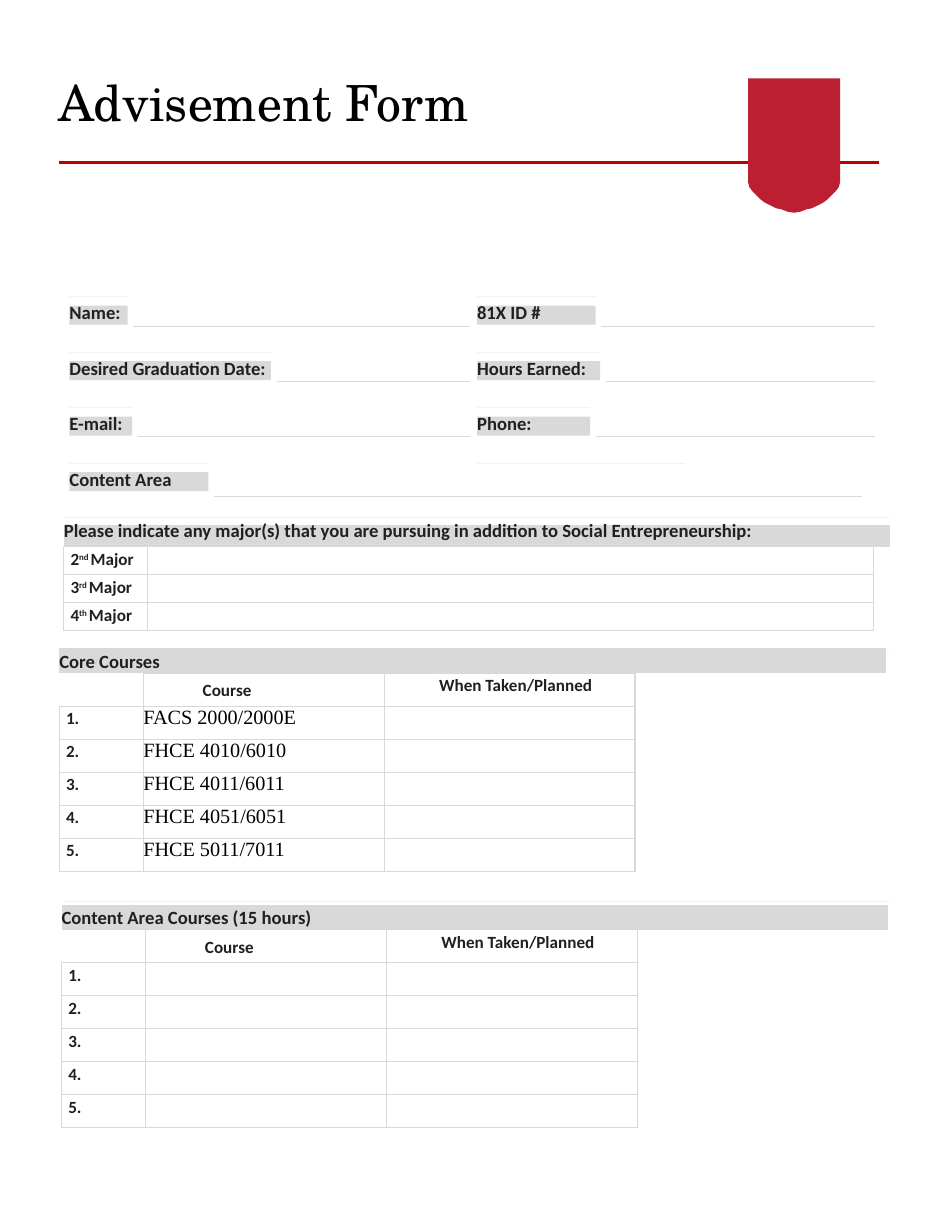
from dataclasses import dataclass

from pptx import Presentation
from pptx.dml.color import RGBColor
from pptx.enum.shapes import MSO_CONNECTOR as Connector, MSO_SHAPE as Preset
from pptx.enum.text import MSO_ANCHOR as Anchor, MSO_AUTO_SIZE as AutoSize, PP_ALIGN as Align
from pptx.oxml.xmlchemy import OxmlElement as new_element
from pptx.util import Inches, Pt

GREY, FAINT, INK = "DAD9D9", "F2F2F2", "231F20"
RED, CRIMSON, BLACK, WHITE = "C00000", "BB1F31", "000000", "FFFFFF"
NO_STYLE = "{2D5ABB26-0587-4C30-8999-92F81FD0307C}"
LEFT_COLUMN, RIGHT_COLUMN = 0.62, 4.26
FIRST_FIELD, FIELD_PITCH = 2.65, 0.495
COURSE_COLUMNS = (0.75, 2.15, 2.24, 2.24)
COURSE_ROWS = (0.22,) + (1.77 / 6,) * 6


@dataclass
class Field:
    label: str
    row: int
    left: float
    width: float
    line_end: float
    drop: float = 0.26


FIELDS = (
    Field("Name:", 0, LEFT_COLUMN, 0.52, 4.2),
    Field("81X ID #", 0, RIGHT_COLUMN, 1.06, 7.81),
    Field("Desired Graduation Date:", 1, LEFT_COLUMN, 1.8, 4.2),
    Field("Hours Earned:", 1, RIGHT_COLUMN, 1.1, 7.81),
    Field("E-mail:", 2, LEFT_COLUMN, 0.56, 4.2),
    Field("Phone:", 2, RIGHT_COLUMN, 1.01, 7.81),
    Field("Content Area", 3, LEFT_COLUMN, 1.24, 7.7, 0.3),
)


@dataclass
class CourseTable:
    heading: str
    left: float
    top: float
    courses: tuple[str, ...]


COURSE_TABLES = (
    CourseTable("Core Courses", 0.53, 5.79, (
        "FACS 2000/2000E", "FHCE 4010/6010", "FHCE 4011/6011",
        "FHCE 4051/6051", "FHCE 5011/7011")),
    CourseTable("Content Area Courses (15 hours)", 0.55, 8.08, ("",) * 5),
)


def rgb(color: str) -> RGBColor:
    return RGBColor.from_string(color)


def style_text(para, size: float, font="Calibri", color=INK, bold=True) -> None:
    for span in para.runs:
        span.font.size, span.font.name, span.font.bold = Pt(size), font, bold
        span.font.color.rgb = rgb(color)


def style_heading(para) -> None:
    para.line_spacing = Pt(11.4)
    style_text(para, 12)


def draw_line(page, left: float, top: float, right: float, color: str, weight=0.5) -> None:
    line = page.shapes.add_connector(
        Connector.STRAIGHT, Inches(left), Inches(top), Inches(right), Inches(top))
    line.line.color.rgb, line.line.width = rgb(color), Pt(weight)
    line._element.spPr.append(new_element("a:effectLst"))


def draw_field(page, field: Field) -> None:
    top = FIRST_FIELD + field.row * FIELD_PITCH
    right = field.left + field.width
    draw_line(page, field.left, top, right, FAINT)
    draw_line(page, right + 0.05, top + field.drop, field.line_end, GREY)
    box = page.shapes.add_shape(Preset.RECTANGLE, Inches(field.left), Inches(top + 0.08),
                                Inches(field.width), Inches(0.17))
    box.shadow.inherit = False
    box.fill.solid()
    box.fill.fore_color.rgb = rgb(GREY)
    box.line.fill.background()
    frame = box.text_frame
    frame.margin_left = frame.margin_right = frame.margin_top = frame.margin_bottom = 0
    frame.vertical_anchor, frame.word_wrap = Anchor.TOP, True
    frame.text = field.label
    para = frame.paragraphs[0]
    para.alignment = Align.LEFT
    style_heading(para)


def draw_shield(page, center=7.09, top=0.7) -> None:
    half = ((0.41, top), (0.41, 1.58), (0.41, 1.63), (0.4, 1.67), (0.37, 1.71),
            (0.34, 1.74), (0.3, 1.78), (0.26, 1.81), (0.22, 1.83), (0.16, 1.86),
            (0.11, 1.87), (0.06, 1.89), (0, 1.9))
    outline = [(center - x, y) for x, y in half]
    outline += [(center + x, y) for x, y in reversed(half[:-1])]
    points = [(Inches(x), Inches(y)) for x, y in outline]
    builder = page.shapes.build_freeform(*points[0])
    builder.add_line_segments(points[1:], close=True)
    shield = builder.convert_to_shape()
    shield.shadow.inherit = False
    shield.fill.solid()
    shield.fill.fore_color.rgb = rgb(CRIMSON)
    shield.line.fill.background()


def draw_table(page, left: float, top: float, widths, heights):
    """Add a plain table whose empty cells do not stretch their rows."""
    frame = page.shapes.add_table(len(heights), len(widths), Inches(left), Inches(top),
                                  Inches(sum(widths)), Inches(sum(heights)))
    table = frame.table
    table.first_row = table.horz_banding = False
    table._tbl.tblPr[0].text = NO_STYLE
    for column, width in zip(table.columns, widths):
        column.width = Inches(width)
    for row, height in zip(table.rows, heights):
        row.height = Inches(height)
    for cell in table.iter_cells():
        cell.margin_left = cell.margin_right = cell.margin_top = cell.margin_bottom = 0
        cell.fill.background()
        end = new_element("a:endParaRPr")
        end.set("sz", "1000")
        cell.text_frame.paragraphs[0]._p.append(end)
    return table


def add_borders(cell) -> None:
    for index, side in enumerate(("a:lnL", "a:lnR", "a:lnT", "a:lnB")):
        border, fill, color = map(new_element, (side, "a:solidFill", "a:srgbClr"))
        border.set("w", str(Pt(0.75)))
        color.set("val", GREY)
        fill.append(color)
        border.append(fill)
        cell._tc.get_or_add_tcPr().insert(index, border)


def fill_heading(table, text: str, anchor=Anchor.TOP) -> None:
    cell = table.cell(0, 0)
    cell.merge(table.cell(0, len(table.columns) - 1))
    cell.fill.solid()
    cell.fill.fore_color.rgb = rgb(GREY)
    cell.vertical_anchor = anchor
    cell.text = text
    style_heading(cell.text_frame.paragraphs[0])


def fill_label(cell, parts: tuple[str, ...], indent=0.06) -> None:
    """Write a bold label; a second part is set as superscript."""
    cell.margin_top = Inches(0.02)
    para = cell.text_frame.paragraphs[0]
    for part in parts:
        para.add_run().text = part
    para._p.get_or_add_pPr().set("marL", str(Inches(indent)))
    para.space_before = Pt(1.2)
    style_text(para, 11)
    for span in para.runs[1:2]:
        span.font.size = Pt(9.8)
        span._r.get_or_add_rPr().set("baseline", "30000")


def draw_majors(page) -> None:
    table = draw_table(page, 0.57, 4.69, (0.75, 6.48, 0.15), (0.19, 0.25, 0.25, 0.25))
    fill_heading(table, "Please indicate any major(s) that you are pursuing "
                        "in addition to Social Entrepreneurship:")
    table.cell(1, 2).merge(table.cell(3, 2))
    for row, ordinal in enumerate(("2nd", "3rd", "4th"), start=1):
        fill_label(table.cell(row, 0), (ordinal[0], ordinal[1:] + " ", "Major"))
        for column in range(2):
            add_borders(table.cell(row, column))


def draw_courses(page, section: CourseTable) -> None:
    table = draw_table(page, section.left, section.top, COURSE_COLUMNS, COURSE_ROWS)
    fill_heading(table, section.heading, Anchor.BOTTOM)
    table.cell(1, 3).merge(table.cell(6, 3))
    table.cell(1, 1).vertical_anchor = Anchor.MIDDLE
    fill_label(table.cell(1, 1), ("Course",), 0.53)
    fill_label(table.cell(1, 2), ("When Taken/Planned",), 0.49)
    for number, course in enumerate(section.courses, start=1):
        fill_label(table.cell(number + 1, 0), (f"{number}.",))
        if course:
            cell = table.cell(number + 1, 1)
            cell.text = course
            style_text(cell.text_frame.paragraphs[0], 13, "Times New Roman", BLACK, False)
    for row in range(1, 7):
        for column in range(1 if row == 1 else 0, 3):
            add_borders(table.cell(row, column))


def draw_title(page) -> None:
    title = page.shapes.title
    title.left, title.top, title.width, title.height = map(Inches, (0.42, 0.59, 7.37, 0.64))
    frame = title.text_frame
    frame.text = "Advisement Form"
    frame.auto_size, frame.vertical_anchor = AutoSize.NONE, Anchor.TOP
    frame.paragraphs[0].alignment = Align.LEFT
    style_text(frame.paragraphs[0], 32, "TeX Gyre Schola", BLACK, False)


def main() -> None:
    deck = Presentation()
    deck.slide_width, deck.slide_height = Inches(8.5), Inches(11)
    page = deck.slides.add_slide(deck.slide_layouts[5])
    page.background.fill.solid()
    page.background.fill.fore_color.rgb = rgb(WHITE)
    draw_title(page)
    draw_line(page, 0.53, 1.45, 7.85, RED, 2.25)
    draw_majors(page)
    for top in (4.62, 5.84, 8.05):
        draw_line(page, 0.57, top, 7.95, FAINT)
    for field in FIELDS:
        draw_field(page, field)
    draw_line(page, RIGHT_COLUMN, FIRST_FIELD + 3 * FIELD_PITCH, 6.12, FAINT)
    draw_shield(page)
    for section in COURSE_TABLES:
        draw_courses(page, section)
    deck.save("out.pptx")


if __name__ == "__main__":
    main()
